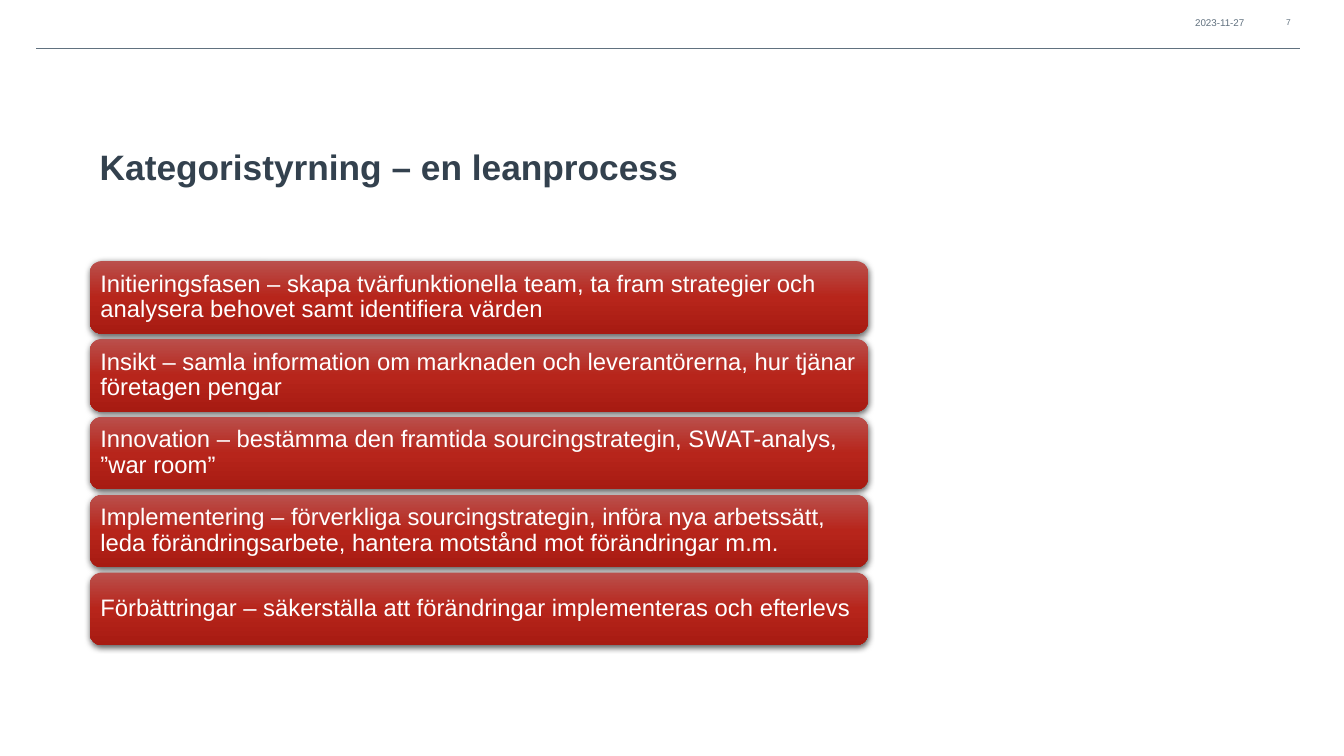
from copy import deepcopy

from lxml import etree
from pptx import Presentation
from pptx import util as u
from pptx.dml.color import RGBColor
from pptx.enum import shapes, text
from pptx.oxml import ns

COLORS = {
    "title": "33414E",
    "muted": "61717F",
    "white": "FFFFFF",
    "red_top": "BA504C",
    "red_middle": "B7251B",
    "red_bottom": "A71B12",
    "shadow": "000000",
}
PHASES = [
    "Initieringsfasen – skapa tvärfunktionella team, ta fram strategier och analysera behovet samt identifiera värden",
    "Insikt – samla information om marknaden och leverantörerna, hur tjänar företagen pengar",
    "Innovation – bestämma den framtida sourcingstrategin, SWAT-analys, ”war room”",
    "Implementering – förverkliga sourcingstrategin, införa nya arbetssätt, leda förändringsarbete, hantera motstånd mot förändringar m.m.",
    "Förbättringar – säkerställa att förändringar implementeras och efterlevs",
]
PHASE_HEIGHT = 0.72


def rgb(name):
    return RGBColor.from_string(COLORS[name])


def write(shape, words, size, color, insets, align=text.PP_ALIGN.LEFT, bold=False):
    frame = shape.text_frame
    frame_format = {
        "word_wrap": True,
        "auto_size": text.MSO_AUTO_SIZE.NONE,
        "vertical_anchor": text.MSO_ANCHOR.MIDDLE,
    }
    for side, inset in zip(("left", "top", "right", "bottom"), insets):
        frame_format["margin_" + side] = u.Inches(inset)
    for name, value in frame_format.items():
        setattr(frame, name, value)
    para = frame.paragraphs[0]
    para.alignment = align
    para.line_spacing = 0.9
    span = para.add_run()
    span.text = words
    for name, value in {"name": "Arial", "size": u.Pt(size), "bold": bold}.items():
        setattr(span.font, name, value)
    span.font.color.rgb = rgb(color)


def add_header(page, left, top, width, height):
    bottom = u.Inches(top + height)
    rule = page.shapes.add_connector(
        shapes.MSO_CONNECTOR.STRAIGHT, u.Inches(left), bottom, u.Inches(left + width), bottom
    )
    rule.line.color.rgb = rgb("muted")
    rule.line.width = u.Pt(0.75)
    etree.SubElement(rule._element.spPr, ns.qn("a:effectLst"))
    right = left + width
    for words, offset, box_width, size in (("2023-11-27", 1.38, 0.93, 7), ("7", 0.36, 0.37, 6)):
        box = page.shapes.add_textbox(
            u.Inches(right - offset), u.Inches(top), u.Inches(box_width), u.Inches(0.22)
        )
        write(box, words, size, "muted", (0.1, 0.05, 0.1, 0.05), text.PP_ALIGN.RIGHT)


def add_title(page, left, top, width, height):
    box = page.shapes.add_textbox(*map(u.Inches, (left, top, width, height)))
    write(box, "Kategoristyrning – en leanprocess", 25.2, "title", (0.1, 0.31, 0.1, 0.05), bold=True)


def style_phase(box):
    box.fill.gradient()
    box.fill.gradient_angle = 270
    stop_list = box._element.spPr.find(".//" + ns.qn("a:gsLst"))
    stop_list.insert(1, deepcopy(stop_list[0]))
    levels = ((0, "red_top"), (0.5, "red_middle"), (1, "red_bottom"))
    for stop, (position, color) in zip(box.fill.gradient_stops, levels):
        stop.position = position
        stop.color.rgb = rgb(color)
    box.line.fill.background()
    box.shadow.inherit = False
    effects = box._element.spPr.find(ns.qn("a:effectLst"))
    shadow = etree.SubElement(
        effects, ns.qn("a:outerShdw"), blurRad=str(u.Pt(4.5)), dist=str(u.Pt(1.5)),
        dir="5400000", algn="ctr", rotWithShape="0",
    )
    shade = etree.SubElement(shadow, ns.qn("a:srgbClr"), val=COLORS["shadow"])
    etree.SubElement(shade, ns.qn("a:alpha"), val="63000")


def add_phases(page, left, top, width, height):
    pitch = (height - PHASE_HEIGHT) / (len(PHASES) - 1)
    for index, words in enumerate(PHASES):
        box = page.shapes.add_shape(
            shapes.MSO_SHAPE.ROUNDED_RECTANGLE,
            *map(u.Inches, (left, top + index * pitch, width, PHASE_HEIGHT)),
        )
        style_phase(box)
        write(box, words, 17, "white", (0.07, 0.07, 0.07, 0.07))


def main():
    deck = Presentation()
    deck.slide_width = u.Inches(13.33)
    deck.slide_height = u.Inches(7.5)
    page = deck.slides.add_slide(deck.slide_layouts[6])
    add_header(page, 0.36, 0.12, 12.53, 0.36)
    add_title(page, 0.89, 1.19, 7.72, 0.72)
    add_phases(page, 0.89, 2.59, 7.72, 3.81)
    deck.save("out.pptx")


if __name__ == "__main__":
    main()
